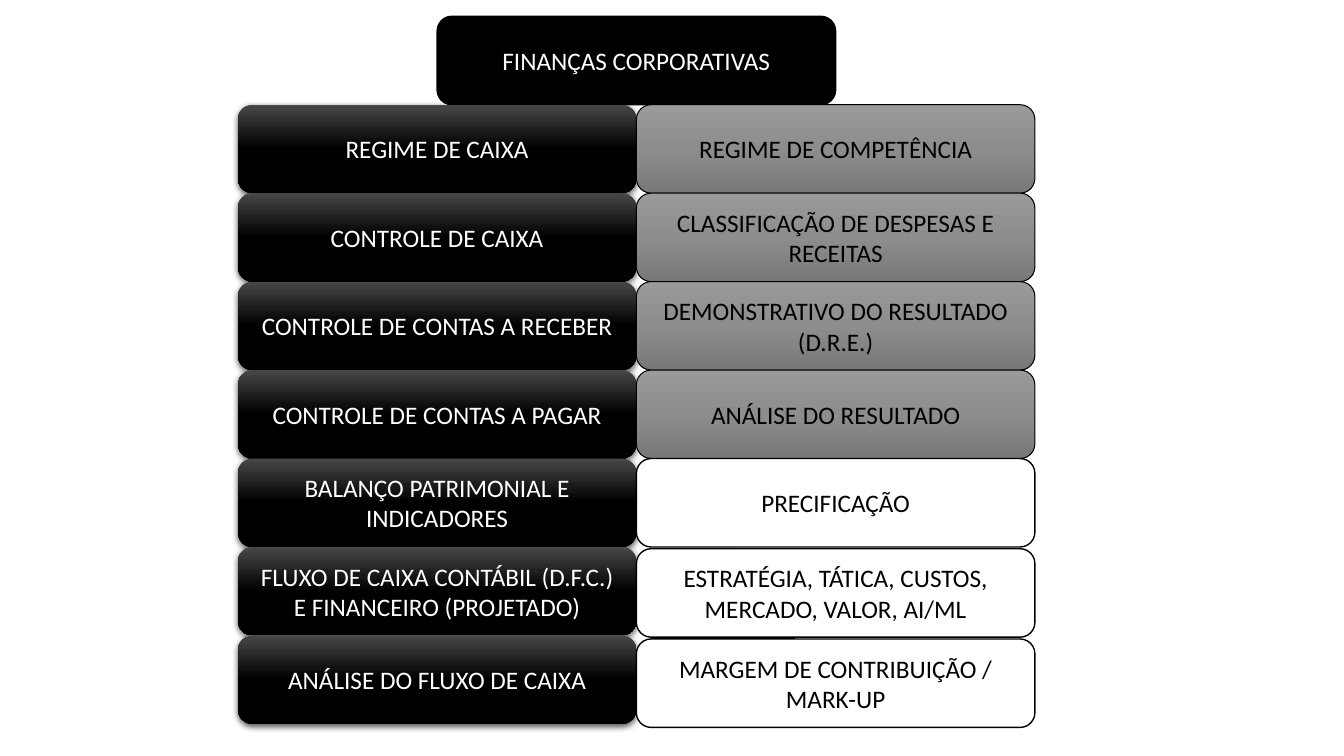
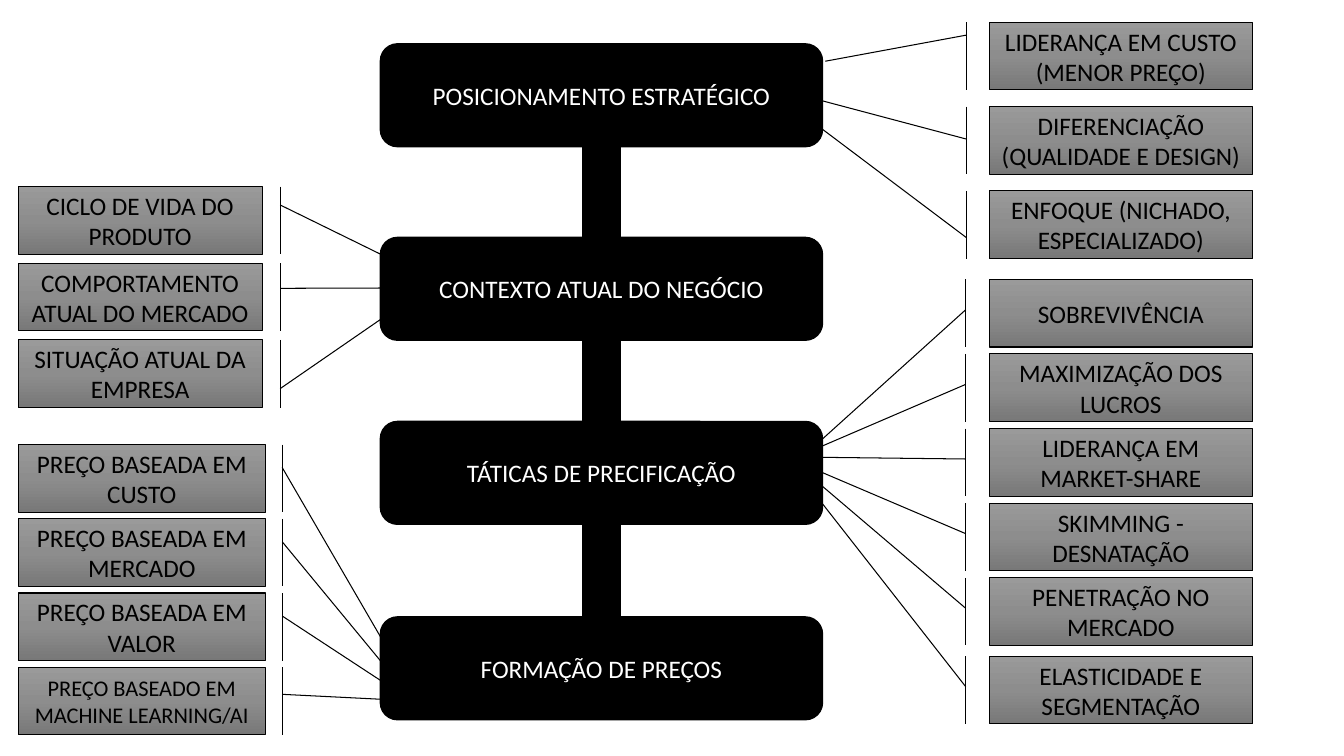
"""Build two slides on corporate finance and pricing, with lengths as percent of the slide."""
from copy import deepcopy
from typing import NamedTuple

from lxml import etree
from pptx import Presentation
from pptx.dml.color import RGBColor
from pptx.enum.shapes import MSO_SHAPE
from pptx.enum.text import MSO_ANCHOR, PP_ALIGN
from pptx.oxml.ns import qn
from pptx.shapes.autoshape import Shape
from pptx.slide import Slide
from pptx.util import Emu, Inches, Pt

ROUND = MSO_SHAPE.ROUNDED_RECTANGLE
MINUS = MSO_SHAPE.MATH_MINUS
CALL = MSO_SHAPE.LINE_CALLOUT_1_BORDER_AND_ACCENT_BAR
MIDDLE = MSO_ANCHOR.MIDDLE
CENTER = PP_ALIGN.CENTER

WIDE, HIGH = Inches(13.33), Inches(7.5)
FONT = "Calibri"
BLACK = RGBColor(0x00, 0x00, 0x00)
WHITE = RGBColor(0xFF, 0xFF, 0xFF)
COAL = RGBColor(0x47, 0x47, 0x47)
PALE = RGBColor(0x9A, 0x9A, 0x9A)
GRAY = RGBColor(0x8D, 0x8D, 0x8D)
DEEP = RGBColor(0x78, 0x78, 0x78)


class Look(NamedTuple):
    fill: tuple[RGBColor, ...]
    ink: RGBColor
    line: float = 0
    shade: bool = False


class Box(NamedTuple):
    x: float
    y: float
    w: float
    h: float


class Stack(NamedTuple):
    col: float
    row: float
    step: float
    look: Look
    texts: tuple[str, ...]


class Note(NamedTuple):
    text: str
    start: float
    tip_x: float
    tip_y: float
    size: int = 18


class Group(NamedTuple):
    x: float
    w: float
    bar: float
    top: float
    step: float
    notes: tuple[Note, ...]


SOLID = Look((BLACK,), WHITE, 1)
DARK = Look((COAL, BLACK, BLACK), WHITE, shade=True)
MID = Look((PALE, GRAY, DEEP), BLACK, 0.75)
LIGHT = Look((WHITE,), BLACK, 1)

LEFT, TOP, COL, ROW = 17.7, 2.15, 29.65, 11.7
STACKS = (
    Stack(0.5, 0, 1, SOLID, ("FINANÇAS CORPORATIVAS",)),
    Stack(0, 1, 1, DARK, (
        "REGIME DE CAIXA",
        "CONTROLE DE CAIXA",
        "CONTROLE DE CONTAS A RECEBER",
        "CONTROLE DE CONTAS A PAGAR",
        "BALANÇO PATRIMONIAL E INDICADORES",
        "FLUXO DE CAIXA CONTÁBIL (D.F.C.) E FINANCEIRO (PROJETADO)",
        "ANÁLISE DO FLUXO DE CAIXA",
    )),
    Stack(1, 1, 1, MID, (
        "REGIME DE COMPETÊNCIA",
        "CLASSIFICAÇÃO DE DESPESAS E RECEITAS",
        "DEMONSTRATIVO DO RESULTADO (D.R.E.)",
        "ANÁLISE DO RESULTADO",
    )),
    Stack(1, 5, 1.02, LIGHT, (
        "PRECIFICAÇÃO",
        "ESTRATÉGIA, TÁTICA, CUSTOS, MERCADO, VALOR, AI/ML",
        "MARGEM DE CONTRIBUIÇÃO / MARK-UP",
    )),
)

HUB_X, HUB_W, HUB_H = 28.3, 32.9, 13.6
HUBS = {
    "POSICIONAMENTO ESTRATÉGICO": 5.8,
    "CONTEXTO ATUAL DO NEGÓCIO": 31.4,
    "TÁTICAS DE PRECIFICAÇÃO": 55.75,
    "FORMAÇÃO DE PREÇOS": 81.6,
}
LINK_W, LINK_H, LINK_BAR = 9.4, 20.8, 0.24
NOTE_H = 8.95
GROUPS = (
    Group(73.6, 19.6, 71.9, 2.95, 11.15, (
        Note("LIDERANÇA EM CUSTO\n(MENOR PREÇO)", 0.19, 61.4, 8.1),
        Note("DIFERENCIAÇÃO\n(QUALIDADE E DESIGN)", 0.48, 60.9, 13.2),
        Note("ENFOQUE (NICHADO, ESPECIALIZADO)", 0.69, 60.75, 16.5),
    )),
    Group(1.35, 18.15, 20.85, 24.7, 10.13, (
        Note("CICLO DE VIDA DO PRODUTO", 0.27, 28.4, 33.7),
        Note("COMPORTAMENTO ATUAL DO MERCADO", 0.37, 28.7, 38.1),
        Note("SITUAÇÃO ATUAL DA EMPRESA", 0.72, 28.6, 41.9),
    )),
    Group(1.35, 18.4, 21, 58.8, 9.82, (
        Note("PREÇO BASEADA EM CUSTO", 0.34, 28.4, 84.5),
        Note("PREÇO BASEADA EM MERCADO", 0.34, 28.4, 87.6),
        Note("PREÇO BASEADA EM VALOR", 0.34, 28.4, 90.1),
        Note("PREÇO BASEADO EM MACHINE LEARNING/AI", 0.4, 28.4, 92.5, 16),
    )),
    Group(73.6, 19.6, 71.85, 36.95, 9.87, (
        Note("SOBREVIVÊNCIA", 0.45, 61.05, 58.3),
        Note("MAXIMIZAÇÃO DOS LUCROS", 0.45, 61.05, 59.1),
        Note("LIDERANÇA EM MARKET-SHARE", 0.45, 61.2, 60.5),
        Note("SKIMMING - DESNATAÇÃO", 0.45, 61.05, 62.4),
        Note("PENETRAÇÃO NO MERCADO", 0.45, 61.05, 64.1),
    )),
    Group(73.6, 19.6, 71.85, 86.8, 9.87, (
        Note("ELASTICIDADE E SEGMENTAÇÃO", 0.45, 61.05, 66.3),
    )),
)


def paint(shape: Shape, look: Look) -> None:
    fill = shape.fill
    if len(look.fill) == 1:
        fill.solid()
        fill.fore_color.rgb = look.fill[0]
    else:
        fill.gradient()
        fill.gradient_angle = 270
        stops = shape.element.spPr.find(".//" + qn("a:gsLst"))
        stops.append(deepcopy(stops[-1]))
        for i, (stop, tone) in enumerate(zip(fill.gradient_stops, look.fill)):
            stop.position = i / 2
            stop.color.rgb = tone
    if look.line:
        shape.line.color.rgb = BLACK
        shape.line.width = Pt(look.line)
    else:
        shape.line.fill.background()
    shape.shadow.inherit = False
    if look.shade:
        cast(shape)


def cast(shape: Shape) -> None:
    root = shape.element.spPr.find(qn("a:effectLst"))
    drop = etree.SubElement(root, qn("a:outerShdw"), blurRad=str(Pt(4.5)),
                            dist=str(Pt(1.5)), dir="5400000", rotWithShape="0")
    tone = etree.SubElement(drop, qn("a:srgbClr"), val=str(BLACK))
    etree.SubElement(tone, qn("a:alpha"), val="63000")


def add(slide: Slide, kind: MSO_SHAPE, box: Box, look: Look,
        text: str = "", size: int = 18) -> Shape:
    spot = (Emu(round(part * side / 100))
            for part, side in zip(box, (WIDE, HIGH, WIDE, HIGH)))
    shape = slide.shapes.add_shape(kind, *spot)
    paint(shape, look)
    if text:
        write(shape, text, size, look.ink)
    return shape


def write(shape: Shape, text: str, size: int, ink: RGBColor) -> None:
    frame = shape.text_frame
    frame.word_wrap = True
    frame.vertical_anchor = MIDDLE
    for i, line in enumerate(text.split("\n")):
        para = frame.add_paragraph() if i else frame.paragraphs[0]
        para.alignment = CENTER
        run = para.add_run()
        run.text = line
        run.font.name = FONT
        run.font.size = Pt(size)
        run.font.color.rgb = ink


def draw_stack(slide: Slide, stack: Stack) -> None:
    for i, text in enumerate(stack.texts):
        y = TOP + ROW * (stack.row + i * stack.step)
        add(slide, ROUND, Box(LEFT + COL * stack.col, y, COL, ROW), stack.look, text)


def draw_hubs(slide: Slide) -> None:
    for text, top in HUBS.items():
        add(slide, ROUND, Box(HUB_X, top, HUB_W, HUB_H), SOLID, text)
    tops = tuple(HUBS.values())
    x = HUB_X + (HUB_W - LINK_W) / 2
    for high, low in zip(tops, tops[1:]):
        y = (high + HUB_H + low - LINK_H) / 2
        link = add(slide, MINUS, Box(x, y, LINK_W, LINK_H), SOLID)
        link.rotation = 90
        link.adjustments[0] = LINK_BAR


def draw_group(slide: Slide, group: Group) -> None:
    for i, note in enumerate(group.notes):
        y = group.top + i * group.step
        box = Box(group.x, y, group.w, NOTE_H)
        shape = add(slide, CALL, box, MID, note.text, note.size)
        ends = (note.start, (group.bar - group.x) / group.w,
                (note.tip_y - y) / NOTE_H, (note.tip_x - group.x) / group.w)
        for k, share in enumerate(ends):
            shape.adjustments[k] = share


def main() -> None:
    deck = Presentation()
    deck.slide_width, deck.slide_height = WIDE, HIGH
    blank = deck.slide_layouts[6]
    themes = deck.slides.add_slide(blank)
    for stack in STACKS:
        draw_stack(themes, stack)
    price = deck.slides.add_slide(blank)
    draw_hubs(price)
    for group in GROUPS:
        draw_group(price, group)
    deck.save("out.pptx")


if __name__ == "__main__":
    main()
